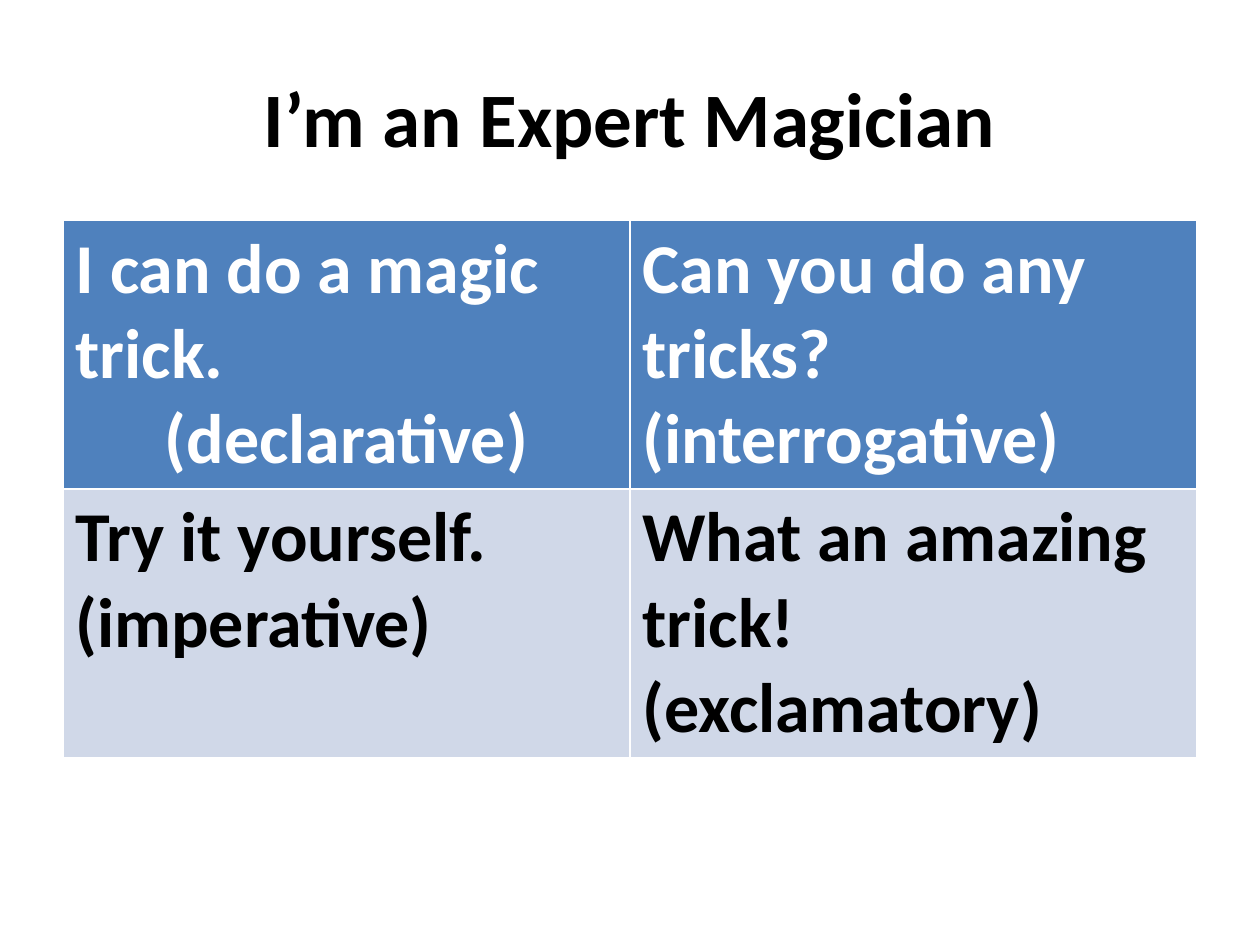
from pptx import Presentation
from pptx.dml.color import RGBColor
from pptx.enum import text
from pptx.util import Inches, Pt

FONT = "Calibri"
HEADER_FILL, BODY_FILL = "4F81BD", "D0D8E8"
WHITE, BLACK = "FFFFFF", "000000"
LEFT, WIDTH = Inches(0.5), Inches(9)

# Each sentence is followed by its type and the alignment of that type.
SENTENCES = [
    [("I can do a magic trick.", "(declarative)", text.PP_ALIGN.CENTER),
     ("Can you do any tricks?", "(interrogative)", text.PP_ALIGN.LEFT)],
    [("Try it yourself.", "(imperative)", text.PP_ALIGN.LEFT),
     ("What an amazing trick!", "(exclamatory)", text.PP_ALIGN.LEFT)],
]


def rgb(value):
    return RGBColor.from_string(value)


def format_paragraph(paragraph, size, color, alignment):
    paragraph.alignment = alignment
    for run in paragraph.runs:
        run.font.name = FONT
        run.font.size = Pt(size)
        run.font.bold = True
        run.font.color.rgb = rgb(color)


def place_title(slide, left, top, width, height):
    title = slide.shapes.title
    title.left, title.top, title.width, title.height = left, top, width, height
    frame = title.text_frame
    frame.text = "I’m an Expert Magician"
    frame.vertical_anchor = text.MSO_ANCHOR.MIDDLE
    format_paragraph(frame.paragraphs[0], 44, BLACK, text.PP_ALIGN.CENTER)


def fill_cell(cell, sentence, sentence_type, type_alignment, fill, color):
    cell.fill.solid()
    cell.fill.fore_color.rgb = rgb(fill)
    cell.text_frame.text = f"{sentence}\n{sentence_type}"
    alignments = (text.PP_ALIGN.LEFT, type_alignment)
    for paragraph, alignment in zip(cell.text_frame.paragraphs, alignments):
        format_paragraph(paragraph, 40, color, alignment)


def place_sentence_table(slide, left, top, width, height):
    """Add the table; its default style draws the white borders."""
    table = slide.shapes.add_table(
        len(SENTENCES), len(SENTENCES[0]), left, top, width, height).table
    for row, entries in enumerate(SENTENCES):
        fill, color = (BODY_FILL, BLACK) if row else (HEADER_FILL, WHITE)
        for column, entry in enumerate(entries):
            fill_cell(table.cell(row, column), *entry, fill, color)


def main():
    deck = Presentation()
    deck.slide_width, deck.slide_height = Inches(10), Inches(7.5)
    slide = deck.slides.add_slide(deck.slide_layouts[5])
    place_title(slide, LEFT, Inches(0.3), WIDTH, Inches(1.25))
    place_sentence_table(slide, LEFT, Inches(1.75), WIDTH, Inches(4.2))
    deck.save("out.pptx")


if __name__ == "__main__":
    main()
